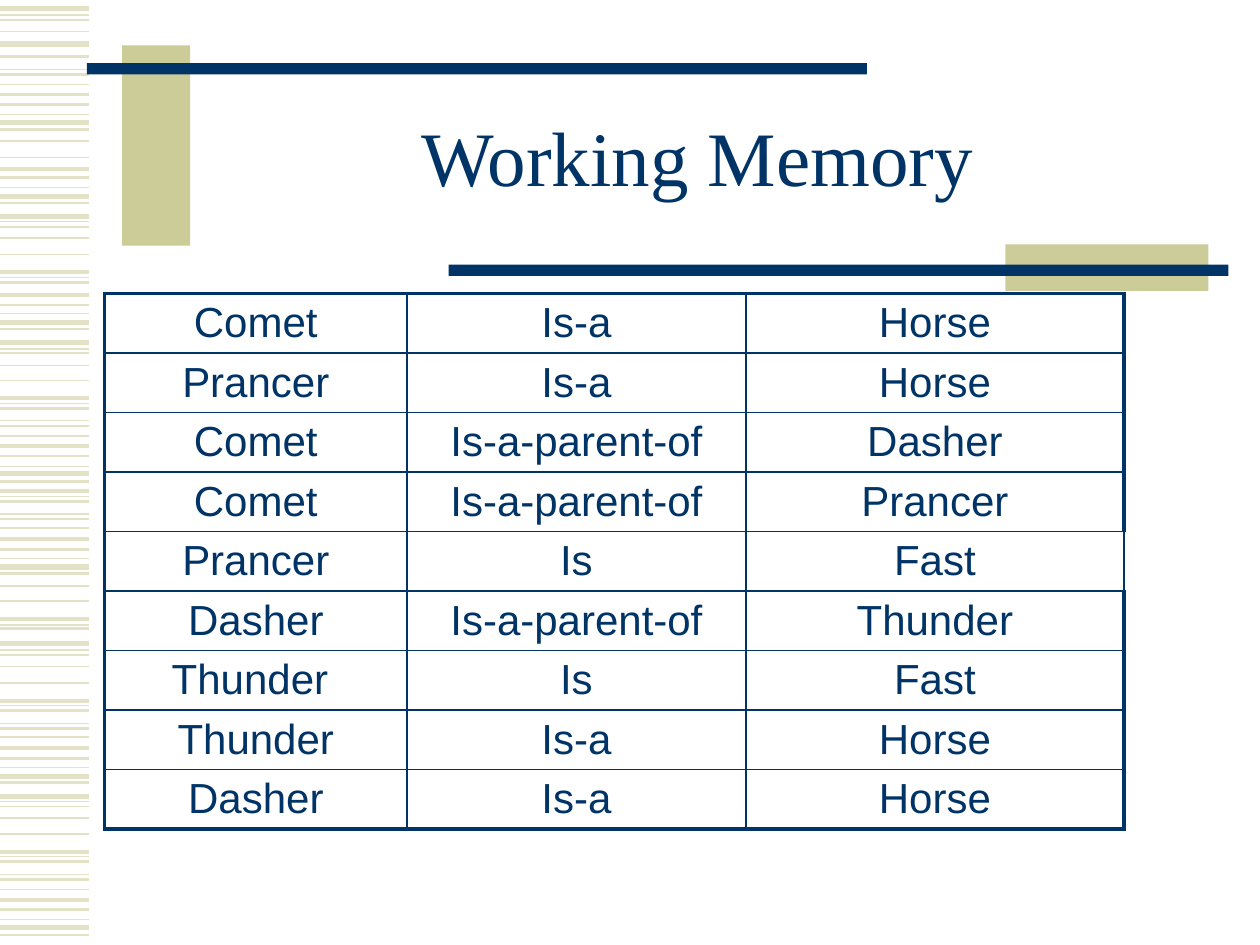
from lxml import etree
from pptx import Presentation
from pptx import util as u
from pptx.dml.color import RGBColor
from pptx.enum import shapes, text
from pptx.oxml.ns import qn

PX = 9144  # EMU per px, 100 px to the inch
NAVY = RGBColor(0x00, 0x33, 0x66)
KHAKI = RGBColor(0xCC, 0xCC, 0x99)
STRIPE = RGBColor(0xE3, 0xE2, 0xC7)

# Line width in points -> heights of the stripes in px
STRIPES = {
    0.75: [12, 55, 91, 149, 176, 220, 249, 277, 320, 334, 370, 394, 408, 443,
           496, 516, 560, 574, 609, 636, 680, 694, 730],
    1: [16, 25, 67, 112, 125, 180, 189, 202, 280, 290, 302, 346, 419, 465,
        477, 520, 529, 542, 585, 640, 649, 662, 706],
    1.5: [45, 59, 83, 103, 141, 161, 224, 242, 261, 324, 338, 362, 382, 398,
          412, 436, 455, 499, 564, 578, 602, 621, 684, 698, 722, 742],
    2.25: [75, 134, 216, 234, 316, 354, 390, 428, 491, 556, 594, 676, 714],
    3: [7, 35, 97, 156, 172, 256, 272, 376, 450, 511, 616, 632, 736],
}
FACTS = [
    ("Comet", "Is-a", "Horse"),
    ("Prancer", "Is-a", "Horse"),
    ("Comet", "Is-a-parent-of", "Dasher"),
    ("Comet", "Is-a-parent-of", "Prancer"),
    ("Prancer", "Is", "Fast"),
    ("Dasher", "Is-a-parent-of", "Thunder"),
    ("Thunder ", "Is", "Fast"),
    ("Thunder", "Is-a", "Horse"),
    ("Dasher", "Is-a", "Horse"),
]
OPEN_ROW = 4  # the row whose right edge is thin
THIN, THICK = 1, 2.25


def emu(*lengths):
    return [u.Emu(round(length * PX)) for length in lengths]


def style_text(para, font, size):
    para.alignment = text.PP_ALIGN.CENTER
    for span in para.runs:
        span.font.name = font
        span.font.size = u.Pt(size)
        span.font.color.rgb = NAVY


def add_stripes(page, left, top, width):
    for weight, heights in STRIPES.items():
        for height in heights:
            y = top + height
            line = page.shapes.add_connector(
                shapes.MSO_CONNECTOR.STRAIGHT, *emu(left, y, left + width, y))
            line.line.color.rgb = STRIPE
            line.line.width = u.Pt(weight)
            etree.SubElement(line._element.spPr, qn("a:effectLst"))


def add_block(page, color, *bounds):
    block = page.shapes.add_shape(shapes.MSO_SHAPE.RECTANGLE, *emu(*bounds))
    block.shadow.inherit = False
    block.fill.solid()
    block.fill.fore_color.rgb = color
    block.line.fill.background()


def add_title_frame(page, left, top):
    # Each bar crosses the block drawn before it
    add_block(page, KHAKI, left + 28, top, 54, 159)
    add_block(page, NAVY, left, top + 14, 619, 9)
    add_block(page, KHAKI, left + 729, top + 158, 161, 37)
    add_block(page, NAVY, left + 287, top + 174, 619, 9)


def set_title(page, left, top, width, height):
    title = page.shapes.title
    title.left, title.top, title.width, title.height = emu(left, top, width, height)
    frame = title.text_frame
    frame.text = "Working Memory"
    frame.vertical_anchor = text.MSO_ANCHOR.MIDDLE
    frame.auto_size = text.MSO_AUTO_SIZE.NONE
    frame.paragraphs[0].line_spacing = 0.85
    style_text(frame.paragraphs[0], "Times New Roman", 44)


def set_borders(cell, weights):
    props = cell._tc.get_or_add_tcPr()
    for index, (side, weight) in enumerate(weights.items()):
        edge = etree.Element(qn("a:" + side), w=str(u.Pt(weight)))
        fill = etree.SubElement(edge, qn("a:solidFill"))
        etree.SubElement(fill, qn("a:srgbClr"), val=str(NAVY))
        props.insert(index, edge)  # borders come before the cell fill


def add_facts(page, left, top, column_widths, height):
    table = page.shapes.add_table(
        len(FACTS), len(column_widths),
        *emu(left, top, sum(column_widths), height)).table
    table.first_row = table.horz_banding = False
    for column, width in zip(table.columns, emu(*column_widths)):
        column.width = width
    last_row, last_column = len(FACTS) - 1, len(column_widths) - 1
    for r, fact in enumerate(FACTS):
        table.rows[r].height = emu(height / len(FACTS))[0]
        for c, word in enumerate(fact):
            cell = table.cell(r, c)
            cell.margin_top, cell.margin_bottom = emu(5, 3)
            cell.fill.background()
            cell.text_frame.text = word
            style_text(cell.text_frame.paragraphs[0], "Arial", 24)
            outer_right = c == last_column and r != OPEN_ROW
            set_borders(cell, {
                "lnL": THICK if c == 0 else THIN,
                "lnR": THICK if outer_right else THIN,
                "lnT": THICK if r == 0 else THIN,
                "lnB": THICK if r == last_row else THIN,
            })


def main():
    deck = Presentation()
    deck.slide_width, deck.slide_height = emu(1000, 750)
    page = deck.slides.add_slide(deck.slide_layouts[5])
    add_stripes(page, 0, 0, 71)
    add_title_frame(page, 69, 36)
    set_title(page, 150, 67, 807, 125)
    add_facts(page, 83, 233, (240, 269, 300), 425)
    deck.save("out.pptx")


if __name__ == "__main__":
    main()
